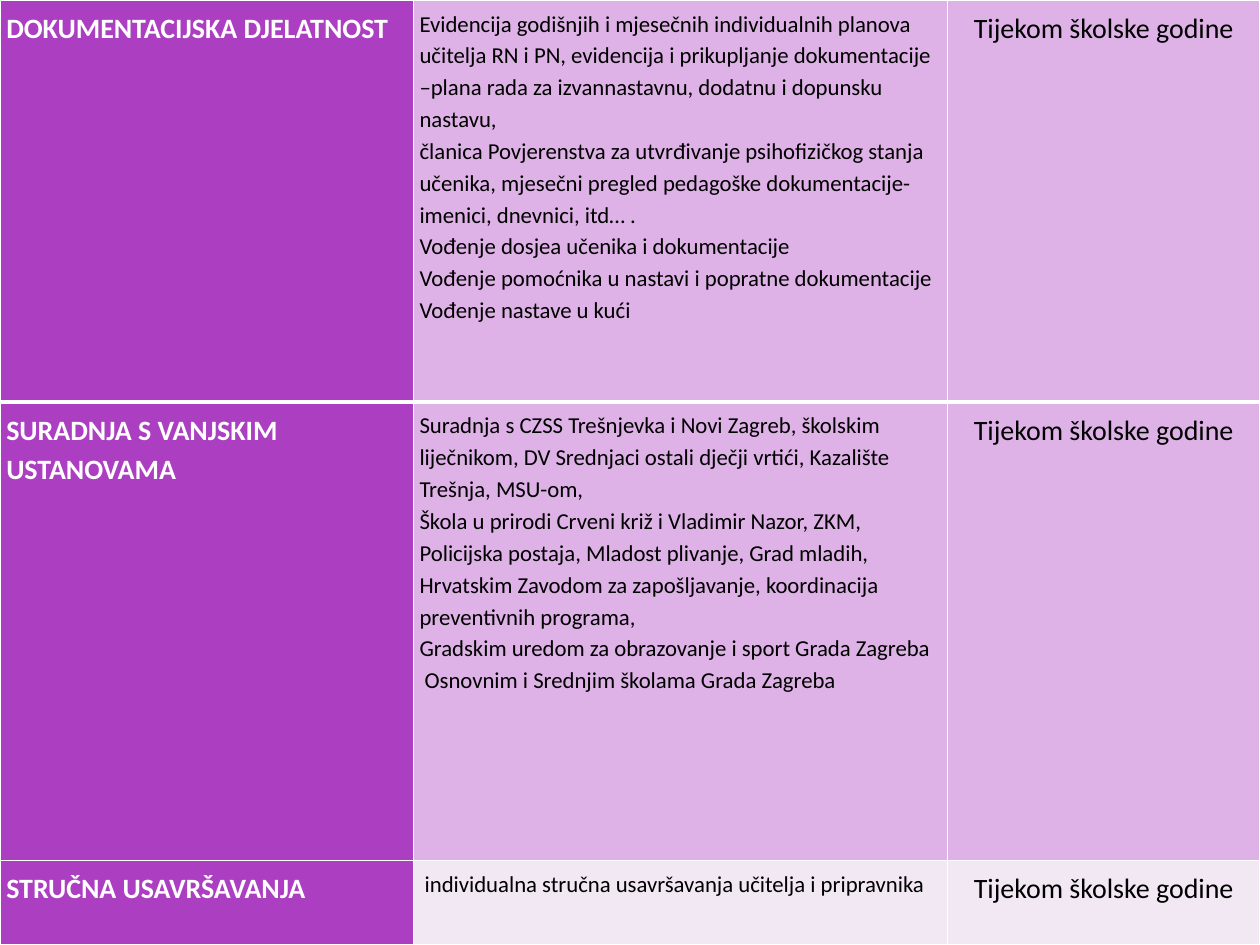
from lxml.etree import SubElement
from pptx import Presentation
from pptx.dml.color import RGBColor
from pptx.enum.text import PP_ALIGN
from pptx.oxml.ns import qn
from pptx.util import Inches, Pt

COLORS = {
    "heading": "AC3EC1",
    "band": "DEB2E6",
    "pale": "F1E8F4",
    "white": "FFFFFF",
    "black": "000000",
}
COLUMN_WIDTHS = [3.28, 4.24, 2.48]
ROW_HEIGHTS = [3.19, 3.64, 0.67]
PERIOD = "Tijekom školske godine"
THIN, THICK = 0.96, 3

activities = [
    ("DOKUMENTACIJSKA DJELATNOST", "band", [
        ("Evidencija godišnjih i mjesečnih individualnih planova učitelja RN i PN, "
         "evidencija i prikupljanje dokumentacije –plana rada za izvannastavnu, "
         "dodatnu i dopunsku nastavu,", 0),
        ("članica Povjerenstva za utvrđivanje psihofizičkog stanja učenika, mjesečni "
         "pregled pedagoške dokumentacije-imenici, dnevnici, itd… .", 0),
        ("Vođenje dosjea učenika i dokumentacije", 0),
        ("Vođenje pomoćnika u nastavi i popratne dokumentacije", 0),
        ("Vođenje nastave u kući", 0),
    ]),
    ("SURADNJA S VANJSKIM USTANOVAMA", "band", [
        ("Suradnja s CZSS Trešnjevka i Novi Zagreb, školskim liječnikom, DV Srednjaci "
         "ostali dječji vrtići, Kazalište Trešnja, MSU-om,", 0),
        ("Škola u prirodi Crveni križ i Vladimir Nazor, ZKM, Policijska postaja, "
         "Mladost plivanje, Grad mladih, Hrvatskim Zavodom za zapošljavanje, "
         "koordinacija preventivnih programa,", 0),
        ("Gradskim uredom za obrazovanje i sport Grada Zagreba", 0),
        ("Osnovnim i Srednjim školama Grada Zagreba", 0.04),
    ]),
    ("STRUČNA USAVRŠAVANJA", "pale", [
        ("individualna stručna usavršavanja učitelja i pripravnika", 0.04),
    ]),
]


def set_borders(cell, top, bottom):
    properties = cell._tc.get_or_add_tcPr()
    for side, width in (("lnL", THIN), ("lnR", THIN), ("lnT", top), ("lnB", bottom)):
        line = SubElement(properties, qn(f"a:{side}"), w=str(Pt(width)))
        SubElement(SubElement(line, qn("a:solidFill")), qn("a:srgbClr"), val=COLORS["white"])


def write_cell(cell, lines, size, color, fill, bold=False, align=PP_ALIGN.LEFT):
    cell.margin_left = cell.margin_right = Inches(0.05)
    cell.margin_top = cell.margin_bottom = Inches(0.05)
    cell.fill.solid()
    cell.fill.fore_color.rgb = RGBColor.from_string(COLORS[fill])
    for index, (text, indent) in enumerate(lines):
        frame = cell.text_frame
        paragraph = frame.add_paragraph() if index else frame.paragraphs[0]
        paragraph.alignment = align
        paragraph.line_spacing = 1.15
        if indent:
            paragraph._p.get_or_add_pPr().set("marL", str(Inches(indent)))
        run = paragraph.add_run()
        run.text = text
        run.font.name = "Calibri"
        run.font.size = Pt(size)
        run.font.bold = bold
        run.font.color.rgb = RGBColor.from_string(COLORS[color])


prs = Presentation()
prs.slide_width, prs.slide_height = Inches(10), Inches(7.5)
slide = prs.slides.add_slide(prs.slide_layouts[6])

plan = slide.shapes.add_table(3, 3, Inches(0), Inches(0), Inches(10), Inches(7.5)).table
plan.first_row = plan.horz_banding = False
for column, width in zip(plan.columns, COLUMN_WIDTHS):
    column.width = Inches(width)
for row, height in zip(plan.rows, ROW_HEIGHTS):
    row.height = Inches(height)

for number, (heading, tint, tasks) in enumerate(activities):
    heading_cell, tasks_cell, period_cell = plan.rows[number].cells
    for cell in (heading_cell, tasks_cell, period_cell):
        set_borders(cell, THICK if number == 1 else THIN, THICK if number == 0 else THIN)
    write_cell(heading_cell, [(heading, 0)], 16, "white", "heading", bold=True)
    write_cell(tasks_cell, tasks, 13, "black", tint)
    write_cell(period_cell, [(PERIOD, 0)], 16, "black", tint, align=PP_ALIGN.CENTER)

prs.save("out.pptx")
